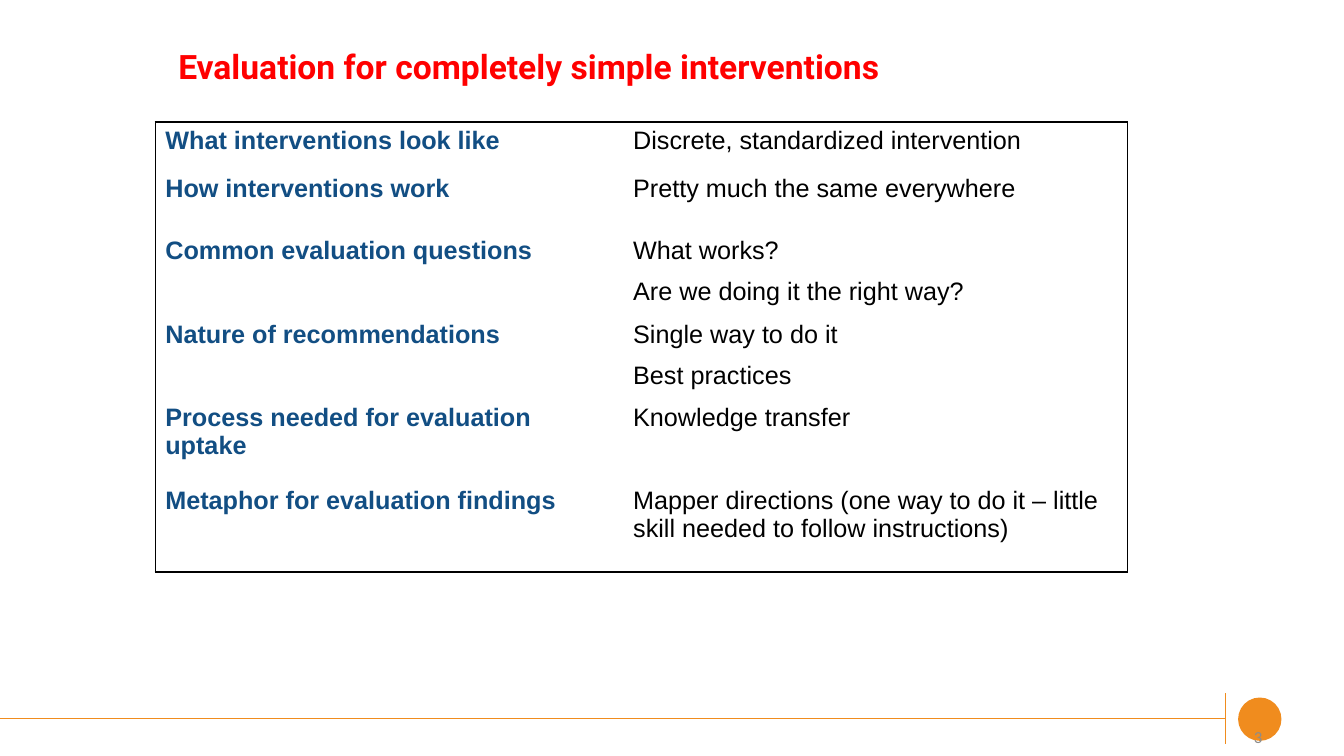
from typing import NamedTuple

from lxml import etree
from pptx import Presentation
from pptx import util as u
from pptx.dml.color import RGBColor
from pptx.enum import shapes, text
from pptx.oxml.ns import qn

ORANGE, NAVY, BLACK, RED, GRAY = "F08C1E", "124E83", "000000", "FF0000", "8C8C8C"


class Topic(NamedTuple):
    label: str
    answers: list[str]
    height: float


class Rule(NamedTuple):
    x1: float
    y1: float
    x2: float
    y2: float


TOPICS = [
    Topic("What interventions look like", ["Discrete, standardized intervention"], 0.47),
    Topic("How interventions work", ["Pretty much the same everywhere"], 0.62),
    Topic("Common evaluation questions",
          ["What works?", "Are we doing it the right way?"], 0.83),
    Topic("Nature of recommendations", ["Single way to do it", "Best practices"], 0.82),
    Topic("Process needed for evaluation uptake", ["Knowledge transfer"], 0.82),
    Topic("Metaphor for evaluation findings",
          ["Mapper directions (one way to do it – little skill needed to follow instructions)"],
          0.9),
]
FOOTER_RULES = [Rule(12.15, 6.88, 12.15, 7.38), Rule(0, 7.13, 12.15, 7.13)]
COLUMN_WIDTHS = [4.64, 5]


def color(value: str) -> RGBColor:
    return RGBColor.from_string(value)


def write(frame, lines: list[str], *, size: float, font: str, fill: str,
          bold: bool = False, align=text.PP_ALIGN.LEFT, line_spacing: float = 1.0) -> None:
    """Write one paragraph per line, half a line apart."""
    frame.word_wrap = True
    for index, line in enumerate(lines):
        para = frame.paragraphs[0] if index == 0 else frame.add_paragraph()
        para.alignment = align
        para.line_spacing = line_spacing
        if index:
            para.space_before = u.Pt(size / 2)
        span = para.add_run()
        span.text = line
        span.font.size = u.Pt(size)
        span.font.name = font
        span.font.bold = bold
        span.font.color.rgb = color(fill)


def add_text(page, left: float, top: float, width: float, height: float,
             content: str, **style) -> None:
    box = page.shapes.add_textbox(*map(u.Inches, (left, top, width, height)))
    box.text_frame.vertical_anchor = text.MSO_ANCHOR.MIDDLE
    write(box.text_frame, [content], **style)


def add_rule(page, rule: Rule) -> None:
    line = page.shapes.add_connector(shapes.MSO_CONNECTOR.STRAIGHT, *map(u.Inches, rule))
    line.line.color.rgb = color(ORANGE)
    line.line.width = u.Pt(0.5)
    etree.SubElement(line._element.spPr, qn("a:effectLst"))


def set_borders(cell, drawn: dict[str, bool]) -> None:
    """Draw or hide each side, given in the order L, R, T, B."""
    properties = cell._tc.get_or_add_tcPr()
    for side, visible in drawn.items():
        border = etree.SubElement(properties, qn(f"a:ln{side}"), w=str(u.Pt(1)))
        if visible:
            fill = etree.SubElement(border, qn("a:solidFill"))
            etree.SubElement(fill, qn("a:srgbClr"), val=BLACK)
        else:
            etree.SubElement(border, qn("a:noFill"))


def add_topics(page) -> None:
    size = (sum(COLUMN_WIDTHS), sum(topic.height for topic in TOPICS))
    frame = page.shapes.add_table(len(TOPICS), len(COLUMN_WIDTHS),
                                  *map(u.Inches, (1.54, 1.21, *size)))
    table = frame.table
    table.first_row = table.horz_banding = False
    for column, width in zip(table.columns, COLUMN_WIDTHS):
        column.width = u.Inches(width)
    for row, topic in enumerate(TOPICS):
        table.rows[row].height = u.Inches(topic.height)
        for column, lines in enumerate(([topic.label], topic.answers)):
            cell = table.cell(row, column)
            set_borders(cell, {"L": column == 0, "R": column == 1,
                               "T": row == 0, "B": row == len(TOPICS) - 1})
            cell.fill.background()
            write(cell.text_frame, lines, size=18, font="Arial",
                  fill=BLACK if column else NAVY, bold=column == 0)


def add_footer(page) -> None:
    dot = page.shapes.add_shape(shapes.MSO_SHAPE.OVAL,
                                *map(u.Inches, (12.28, 6.92, 0.43, 0.43)))
    dot.shadow.inherit = False
    dot.fill.solid()
    dot.fill.fore_color.rgb = color(ORANGE)
    dot.line.fill.background()
    for rule in FOOTER_RULES:
        add_rule(page, rule)
    add_text(page, 9.51, 7.19, 3.11, 0.24, "3", size=12, font="Calibri",
             fill=GRAY, align=text.PP_ALIGN.RIGHT)


def main() -> None:
    deck = Presentation()
    deck.slide_width, deck.slide_height = u.Inches(13.33), u.Inches(7.5)
    page = deck.slides.add_slide(deck.slide_layouts[6])
    add_footer(page)
    add_text(page, 1.67, 0.3, 10, 0.77, "Evaluation for completely simple interventions",
             size=24, font="Roboto", fill=RED, bold=True, line_spacing=0.9)
    add_topics(page)
    deck.save("out.pptx")


if __name__ == "__main__":
    main()
